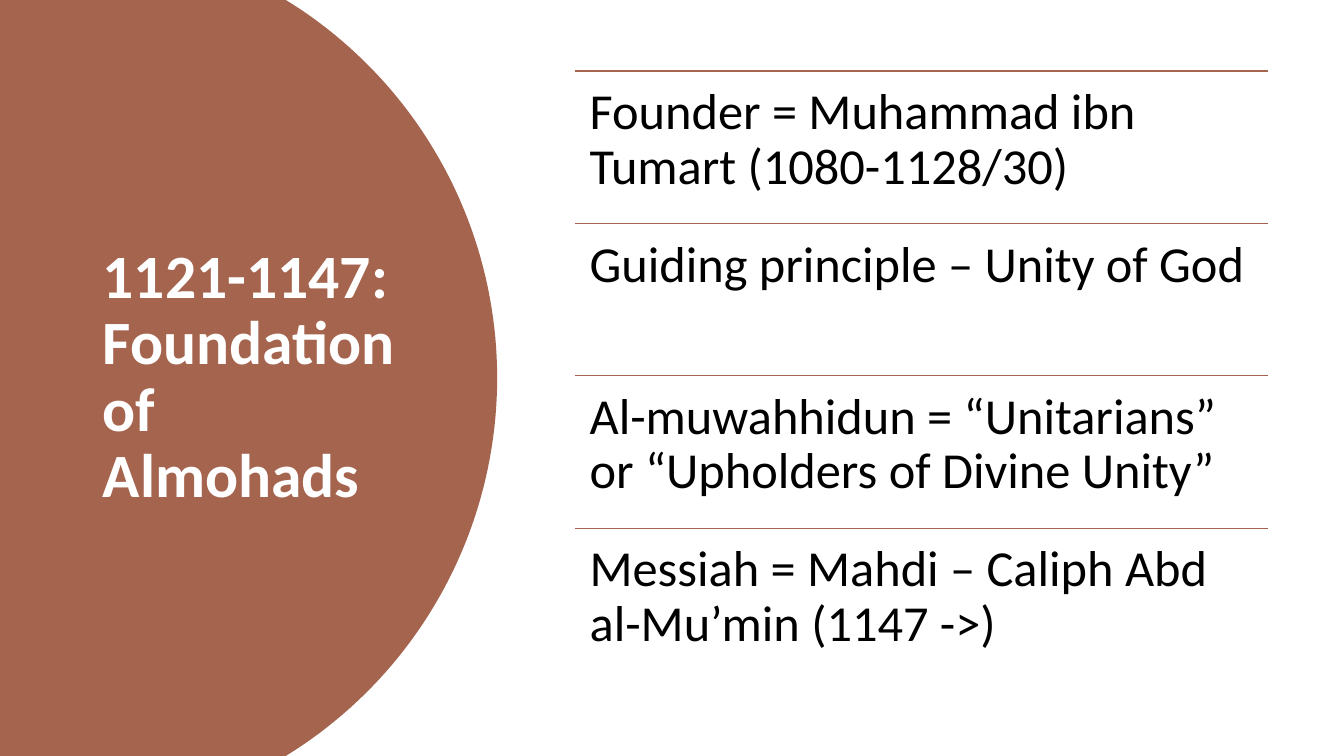
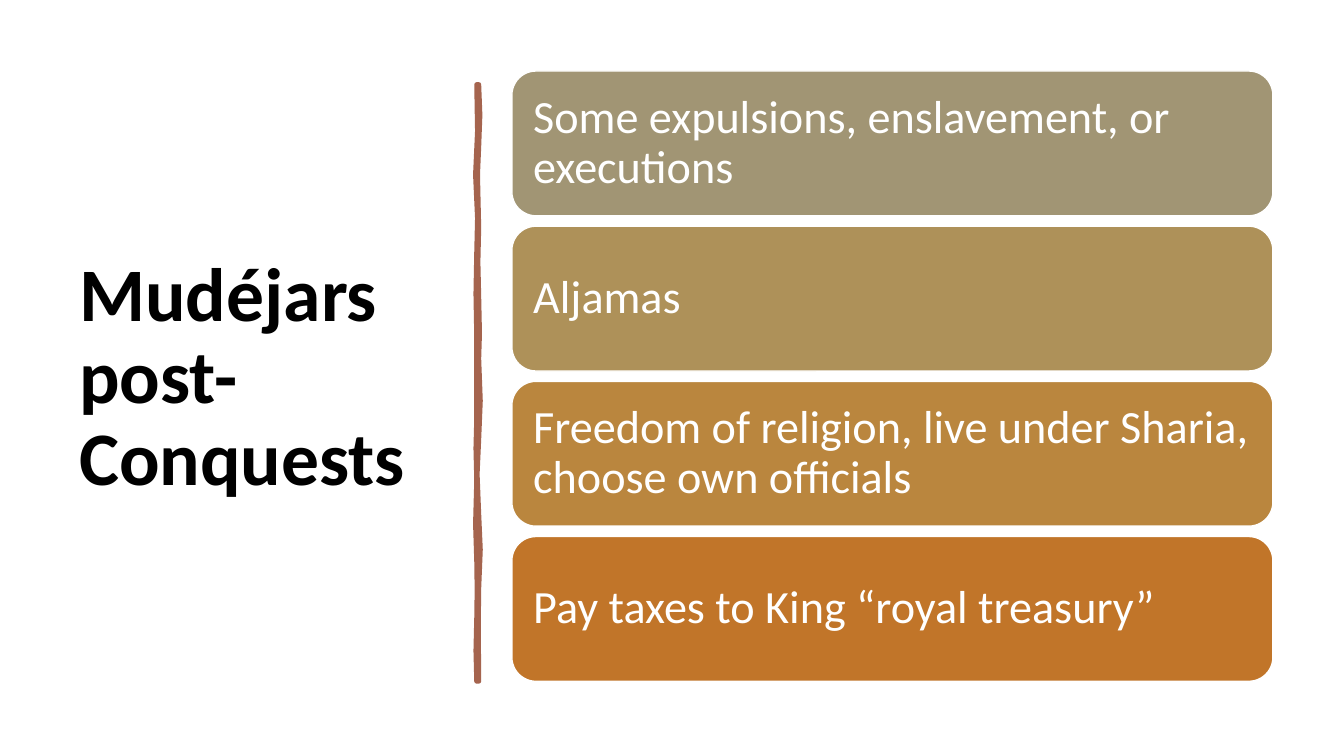
"""Build two slides on the Almohads and the Mudéjars."""
import math
from dataclasses import dataclass

import pptx
import pptx.dml.color
import pptx.enum.shapes
import pptx.enum.text
import pptx.oxml
import pptx.oxml.ns
import pptx.util

Cm = pptx.util.Cm
Pt = pptx.util.Pt
RGBColor = pptx.dml.color.RGBColor
Anchor = pptx.enum.text.MSO_ANCHOR

RUST = RGBColor(0xA5, 0x64, 0x4E)
SAND = RGBColor(0xA1, 0x95, 0x74)
STRAW = RGBColor(0xAE, 0x91, 0x59)
GOLD = RGBColor(0xBA, 0x86, 0x3E)
AMBER = RGBColor(0xC1, 0x75, 0x29)
WHITE = RGBColor(0xFF, 0xFF, 0xFF)
BLACK = RGBColor(0x00, 0x00, 0x00)

FONT = "Calibri"
WIDTH, HEIGHT = 33.87, 19.05
TOP = 1.79


@dataclass(frozen=True)
class Box:
    """A frame in centimetres."""
    left: float
    top: float
    width: float
    height: float

    def frame(self) -> tuple:
        """Return the four sides as lengths."""
        return Cm(self.left), Cm(self.top), Cm(self.width), Cm(self.height)


@dataclass(frozen=True)
class Style:
    """The look of a block of text."""
    size: int
    color: RGBColor
    anchor: Anchor
    bold: bool = False
    inset: float = 0.25
    after: int = 0


@dataclass(frozen=True)
class Card:
    """A filled card and its words."""
    text: str
    fill: RGBColor


ROWS = (
    "Founder = Muhammad ibn Tumart (1080-1128/30)",
    "Guiding principle – Unity of God",
    "Al-muwahhidun = “Unitarians” or “Upholders of Divine Unity”",
    "Messiah = Mahdi – Caliph Abd al-Mu’min (1147 ->)",
)
CARDS = (
    Card("Some expulsions, enslavement, or executions", SAND),
    Card("Aljamas", STRAW),
    Card("Freedom of religion, live under Sharia, choose own officials", GOLD),
    Card("Pay taxes to King “royal treasury”", AMBER),
)
ROW_STYLE = Style(36, BLACK, Anchor.TOP, inset=0.38)
CARD_STYLE = Style(33, WHITE, Anchor.MIDDLE, inset=0.36)

RIGHT_EDGE = (
    (12.07, 2.13), (12.1, 2.9), (12.07, 3.7), (12.04, 4.4), (12.07, 5.74),
    (12.05, 6.6), (12.07, 7.47), (12.09, 8.4), (12.07, 9.04), (12.11, 10.1),
    (12.07, 11.07), (12.03, 11.95), (12.07, 12.95), (12.11, 13.85),
    (12.07, 14.83), (12.06, 15.75), (12.07, 17.17),
)
LEFT_EDGE = (
    (12.01, 17.17), (11.99, 16.4), (12.01, 15.57), (12.02, 14.86),
    (12.01, 14.15), (11.98, 13.2), (12.01, 12.1), (11.99, 11.3),
    (12.01, 10.54), (12.01, 8.5), (11.99, 7.4), (12.01, 6.35),
    (12.03, 5.5), (11.98, 4.4), (12.03, 3.3), (12.01, 2.13),
)


def write(shape, text: str, style: Style) -> None:
    """Put styled text in a shape."""
    frame = shape.text_frame
    frame.text = text
    frame.word_wrap = True
    frame.auto_size = pptx.enum.text.MSO_AUTO_SIZE.NONE
    frame.vertical_anchor = style.anchor
    frame.margin_left = frame.margin_right = Cm(style.inset)
    frame.margin_top = frame.margin_bottom = Cm(min(style.inset, style.inset if style.inset > 0.25 else 0.13))
    for para in frame.paragraphs:
        para.alignment = pptx.enum.text.PP_ALIGN.LEFT
        para.line_spacing = 0.9
        para.space_before = Pt(0)
        para.space_after = Pt(style.after)
        for run in para.runs:
            run.font.name = FONT
            run.font.size = Pt(style.size)
            run.font.bold = style.bold
            run.font.color.rgb = style.color


def paint(shape, fill: RGBColor, line: RGBColor | None = None, width: float = 1) -> None:
    """Set fill and line and drop the shadow."""
    shape.shadow.inherit = False
    shape.fill.solid()
    shape.fill.fore_color.rgb = fill
    if line is None:
        shape.line.fill.background()
    else:
        shape.line.color.rgb = line
        shape.line.width = Pt(width)


def add_title(slide, text: str, box: Box, size: int, color: RGBColor) -> None:
    """Place the title on top of the shapes drawn so far."""
    title = slide.shapes.title
    title.left, title.top, title.width, title.height = box.frame()
    write(title, text, Style(size, color, Anchor.MIDDLE, bold=True, after=6))
    slide.shapes.element.append(title.element)


def add_outline(slide, points):
    """Draw a closed outline through points in centimetres."""
    first, *rest = [(Cm(x), Cm(y)) for x, y in points]
    pen = slide.shapes.build_freeform(*first)
    pen.add_line_segments(rest, close=True)
    return pen.convert_to_shape()


def add_panel(slide) -> None:
    """Draw the left panel that ends in an arc."""
    mid, hub, radius, steps = HEIGHT / 2, 1.35, 11.18, 90
    sweep = math.asin(mid / radius)
    turns = [sweep * (2 * i / steps - 1) for i in range(steps + 1)]
    arc = [(hub + radius * math.cos(t), mid + radius * math.sin(t)) for t in turns]
    paint(add_outline(slide, [(0, 0), *arc, (0, HEIGHT)]), RUST)


def add_rule(slide, left: float, top: float, width: float) -> None:
    """Draw a thin level line."""
    kind = pptx.enum.shapes.MSO_CONNECTOR.STRAIGHT
    rule = slide.shapes.add_connector(kind, Cm(left), Cm(top), Cm(left + width), Cm(top))
    rule.line.color.rgb = RUST
    rule.line.width = Pt(1)
    props = rule.element.find(pptx.oxml.ns.qn("p:spPr"))
    props.append(pptx.oxml.parse_xml(f"<a:effectLst {pptx.oxml.ns.nsdecls('a')}/>"))


def add_rows(slide) -> None:
    """Stack the ruled rows of text."""
    left, width, pitch = 14.48, 17.48, 3.84
    for i, text in enumerate(ROWS):
        box = Box(left, TOP + i * pitch, width, pitch)
        add_rule(slide, box.left, box.top, box.width)
        write(slide.shapes.add_textbox(*box.frame()), text, ROW_STYLE)


def add_cards(slide) -> None:
    """Stack the round cards."""
    kind = pptx.enum.shapes.MSO_SHAPE.ROUNDED_RECTANGLE
    high, pitch = 3.65, 3.91
    for i, card in enumerate(CARDS):
        box = Box(12.9, TOP + i * pitch, 19.18, high)
        shape = slide.shapes.add_shape(kind, *box.frame())
        paint(shape, card.fill, WHITE)
        write(shape, card.text, CARD_STYLE)


def main() -> None:
    """Build and save the deck."""
    deck = pptx.Presentation()
    deck.slide_width, deck.slide_height = Cm(WIDTH), Cm(HEIGHT)
    layout = deck.slide_layouts.get_by_name("Title Only")

    slide = deck.slides.add_slide(layout)
    add_panel(slide)
    add_title(slide, "1121-1147: Foundation of Almohads", Box(2.34, TOP, 8.2, 15.47), 44, WHITE)
    add_rows(slide)

    slide = deck.slides.add_slide(layout)
    add_title(slide, "Mudéjars post-Conquests", Box(1.75, TOP, 9.5, 15.52), 54, BLACK)
    paint(add_outline(slide, RIGHT_EDGE + LEFT_EDGE), RUST, RUST, 3.25)
    add_cards(slide)

    deck.save("out.pptx")


if __name__ == "__main__":
    main()
